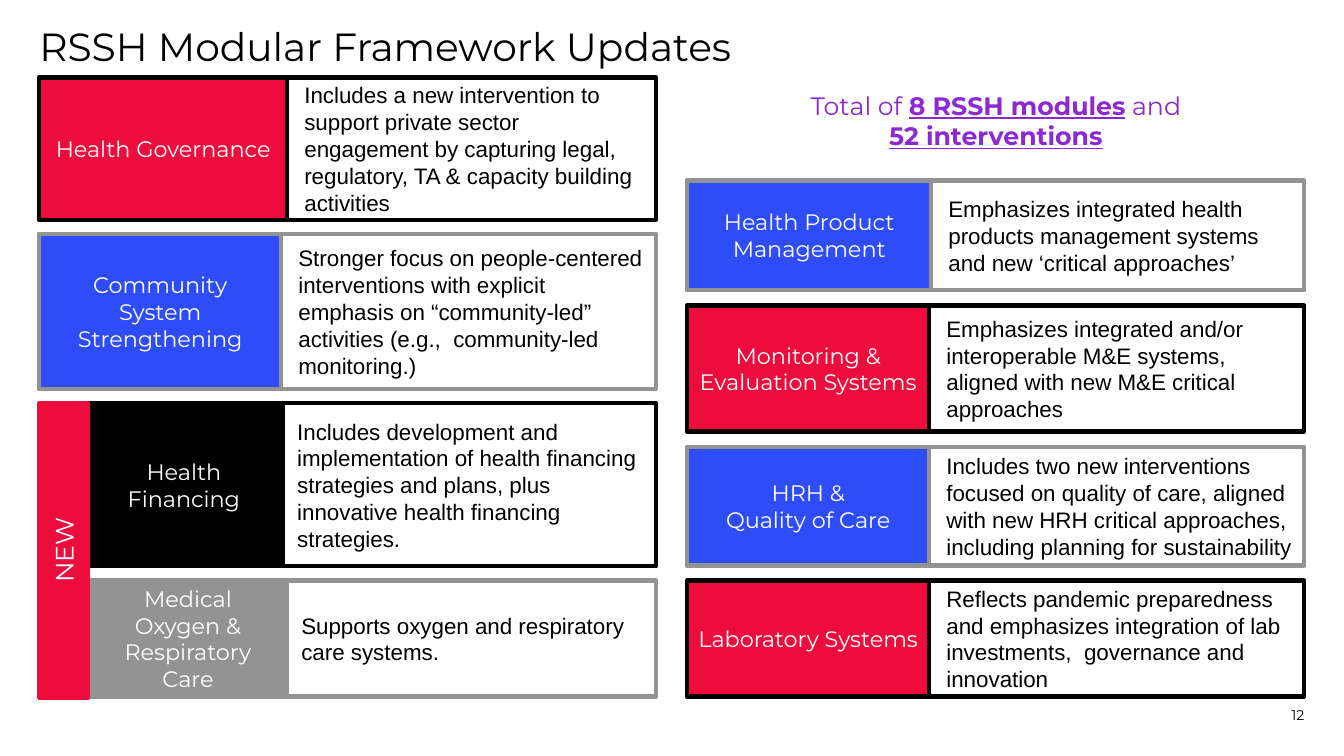
from pptx import Presentation
from pptx.dml.color import RGBColor
from pptx.enum.shapes import MSO_SHAPE
from pptx.enum.text import MSO_ANCHOR, MSO_AUTO_SIZE, PP_ALIGN
from pptx.util import Pt

BLACK = RGBColor(0x00, 0x00, 0x00)
WHITE = RGBColor(0xFF, 0xFF, 0xFF)
RED = RGBColor(0xEE, 0x0C, 0x3D)
BLUE = RGBColor(0x2E, 0x4D, 0xF9)
GRAY = RGBColor(0x93, 0x93, 0x93)
PURPLE = RGBColor(0x8C, 0x29, 0xD3)

TITLE = "RSSH Modular Framework Updates"
PAGE = "12"
TOTAL = [
    [("Total of ", False), ("8 RSSH modules", True), (" and", False)],
    [("52 interventions", True)],
]
LEFT_CARDS = [
    (["Health Governance"],
     "Includes a new intervention to support private sector engagement by capturing legal, "
     "regulatory, TA & capacity building activities",
     RED, BLACK, 28.1, 55.4, 101.5, 177.1, 12.2),
    (["Community System Strengthening"],
     "Stronger focus on people-centered interventions with explicit emphasis on "
     "“community-led” activities (e.g.,  community-led monitoring.)",
     BLUE, GRAY, 28.1, 167, 110.9, 172.8, 12.2),
    (["Health Financing"],
     "Includes development and implementation of health financing strategies and plans, "
     "plus innovative health financing strategies.",
     BLACK, BLACK, 60.5, 288, 116.6, 141.8, 10),
    (["Medical Oxygen & Respiratory Care"],
     "Supports oxygen and respiratory care systems.",
     GRAY, GRAY, 63.4, 414.7, 82.8, 141.8, 10),
]
RIGHT_CARDS = [
    (["Health Product Management"],
     "Emphasizes integrated health products management systems and new ‘critical approaches’",
     BLUE, GRAY, 491, 128.9, 78.5, 174.2, 12.2),
    (["Monitoring & Evaluation Systems"],
     "Emphasizes integrated and/or interoperable M&E systems, aligned with new M&E "
     "critical approaches",
     RED, BLACK, 491, 218.2, 90, 172.8, 12.2),
    (["HRH &", "Quality of Care"],
     "Includes two new interventions focused on quality of care, aligned with new HRH "
     "critical approaches, including planning for sustainability",
     BLUE, GRAY, 491, 319, 85, 172.8, 12.2),
    (["Laboratory Systems"],
     "Reflects pandemic preparedness and emphasizes integration of lab investments,  "
     "governance and innovation",
     RED, BLACK, 491, 414.7, 82.8, 172.8, 12.2),
]
COLUMNS = [(468.7, LEFT_CARDS), (931.7, RIGHT_CARDS)]
TEXT_MARGIN = 8

BODY = {"name": "Arial", "size": Pt(16)}
LABEL = {"name": "Montserrat", "size": Pt(16)}
BANNER = {"name": "Montserrat", "size": Pt(18)}
HEADING = {"name": "Montserrat", "size": Pt(28)}
FOOTER = {"name": "Montserrat", "size": Pt(10)}
NO_INSETS = {"margin_left": 0, "margin_top": 0, "margin_right": 0, "margin_bottom": 0}


def set_all(target, values):
    for name, value in values.items():
        setattr(target, name, value)


def write(tf, lines, font, color, align, anchor=MSO_ANCHOR.MIDDLE, **frame):
    set_all(tf, {"word_wrap": True, "auto_size": MSO_AUTO_SIZE.NONE,
                 "vertical_anchor": anchor, **frame})
    for i, line in enumerate(lines):
        p = tf.paragraphs[0] if i == 0 else tf.add_paragraph()
        p.alignment = align
        for text, strong in [(line, False)] if isinstance(line, str) else line:
            r = p.add_run()
            r.text = text
            set_all(r.font, font)
            r.font.color.rgb = color
            if strong:
                set_all(r.font, {"bold": True, "underline": True})


def add_text(s, box, *args, **frame):
    sp = s.shapes.add_textbox(*map(Pt, box))
    write(sp.text_frame, *args, **frame)


def add_box(s, box, fill, edge):
    sp = s.shapes.add_shape(MSO_SHAPE.RECTANGLE, *map(Pt, box))
    sp.shadow.inherit = False
    if fill is None:
        sp.fill.background()
    else:
        sp.fill.solid()
        sp.fill.fore_color.rgb = fill
    sp.line.color.rgb = edge
    sp.line.width = Pt(3)
    return sp


def add_card(s, right, card):
    label, text, fill, edge, left, top, height, label_width, gap = card
    text_left = left + label_width + gap
    add_text(s, (text_left, top, right - TEXT_MARGIN - text_left, height),
             [text], BODY, BLACK, PP_ALIGN.LEFT, **NO_INSETS)
    add_box(s, (left, top, right - left, height), None, edge)
    sp = add_box(s, (left, top, label_width, height), fill, edge)
    write(sp.text_frame, label, LABEL, WHITE, PP_ALIGN.CENTER)


def main():
    prs = Presentation()
    set_all(prs, {"slide_width": Pt(960), "slide_height": Pt(540)})
    s = prs.slides.add_slide(prs.slide_layouts[5])

    title = s.shapes.title
    set_all(title, {"left": Pt(28.1), "top": Pt(19.4), "width": Pt(903.6), "height": Pt(36.7)})
    write(title.text_frame, [TITLE], HEADING, BLACK, PP_ALIGN.LEFT, MSO_ANCHOR.TOP, **NO_INSETS)
    title.text_frame.paragraphs[0].line_spacing = 0.9

    for right, cards in COLUMNS:
        for card in cards:
            add_card(s, right, card)

    new_bar = add_box(s, (28.1, 288, 34.6, 210.2), RED, RED)
    write(new_bar.text_frame, ["NEW"], BANNER, WHITE, PP_ALIGN.CENTER)
    new_bar.text_frame._txBody.bodyPr.set("vert", "vert270")

    add_text(s, (491, 60.5, 440.7, 51.1), TOTAL, BANNER, PURPLE, PP_ALIGN.CENTER)
    add_text(s, (861.1, 488.2, 70.6, 28.8), [PAGE], FOOTER, BLACK,
             PP_ALIGN.RIGHT, MSO_ANCHOR.BOTTOM, **NO_INSETS)
    prs.save("out.pptx")


if __name__ == "__main__":
    main()
